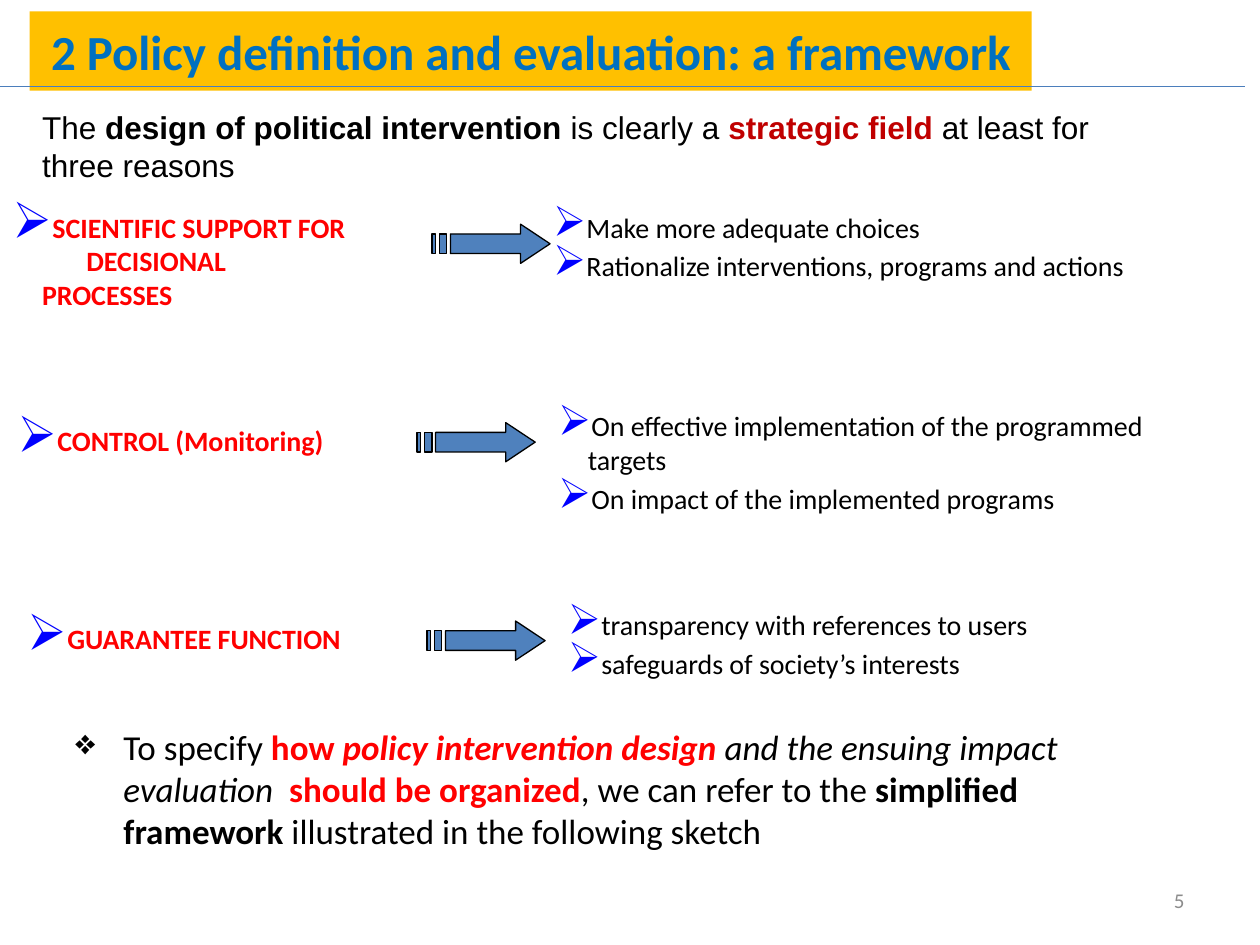
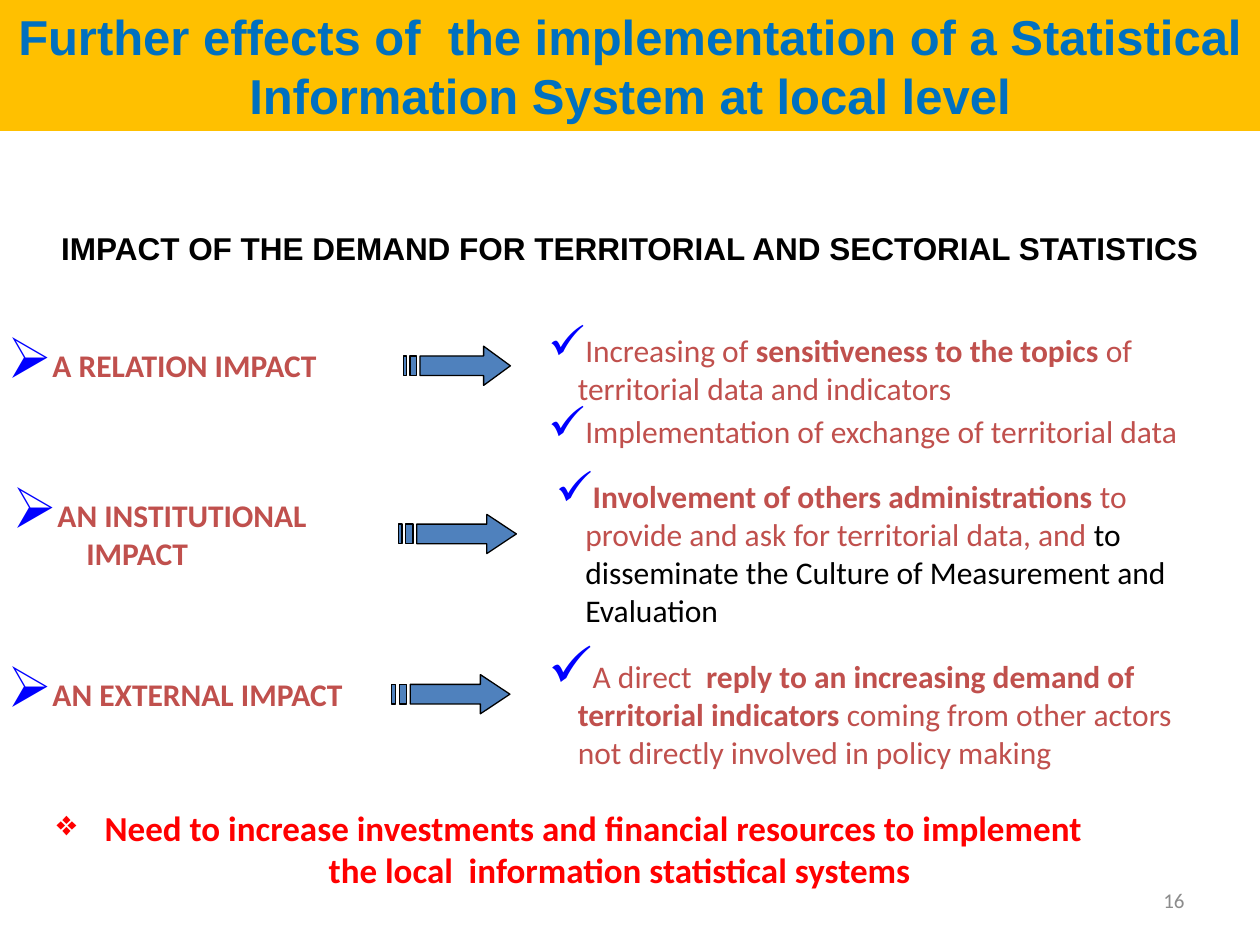
"""Build two slides on policy evaluation and on the effects of a local statistical system."""
from dataclasses import dataclass

import pptx
import pptx.dml.color
import pptx.enum.shapes
import pptx.enum.text
import pptx.oxml
import pptx.oxml.ns
import pptx.util
from pptx.util import Cm

ALIGN = pptx.enum.text.PP_ALIGN
ANCHOR = pptx.enum.text.MSO_ANCHOR


@dataclass(frozen=True)
class Theme:
    band: str = "FFC000"
    title: str = "0070C0"
    ink: str = "000000"
    red: str = "FF0000"
    crimson: str = "C00000"
    brick: str = "C0504D"
    bullet: str = "0000FF"
    arrow: str = "4F81BD"
    rule: str = "4B7EBC"
    number: str = "8C8C8C"
    body_font: str = "Calibri"
    lead_font: str = "Arial"
    title_size: int = 28
    closing_size: int = 20
    lead_size: int = 18
    number_size: int = 12


THEME = Theme()
HANG, CLOSING_HANG, CONTINUED = 0.6, 0.97, 0.89
ARROW_HEIGHT, POINTS_WIDTH = 0.79, 13.79

FRAMEWORK = {
    "title": "2 Policy definition and evaluation: a framework",
    "title_box": (0.6, 0.23, 20.2, 1.6),
    "title_font": THEME.body_font,
    "rule": (0, 1.75, 25.1, 1.75),
    "lead": [("The ", ""), ("design of political intervention ", "b"),
             ("is clearly a ", ""), ("strategic field ", "crimson b"),
             ("at least for three reasons", "")],
    "lead_box": (0.6, 2.06, 21.9, 2.57),
    "lead_align": ALIGN.LEFT,
    "row_size": 16,
    "label_color": THEME.red,
    "point_color": THEME.ink,
    "point_mark": "➢",
    "rows": [
        {"label": ["SCIENTIFIC SUPPORT FOR", "DECISIONAL PROCESSES"],
         "label_at": (0, 4.11, 7.44), "arrow_at": (8.71, 4.52, 2.38),
         "points_at": (10.9, 4.11), "mark_size": 150,
         "points": [[("Make more adequate choices", "")],
                    [("Rationalize interventions, programs and actions", "")]]},
        {"label": ["CONTROL (Monitoring)"],
         "label_at": (0.1, 8.41, 6.8), "arrow_at": (8.41, 8.52, 2.38),
         "points_at": (11, 8.12), "mark_size": 150,
         "points": [[("On effective implementation of the programmed targets", "")],
                    [("On impact of the implemented programs", "")]]},
        {"label": ["GUARANTEE FUNCTION"],
         "label_at": (0.3, 12.4, 7), "arrow_at": (8.61, 12.52, 2.38),
         "points_at": (11.2, 12.12), "mark_size": 150,
         "points": [[("transparency with references to users", "")],
                    [("safeguards of society’s interests", "")]]},
    ],
    "closing": [[("To specify ", ""), ("how ", "red b"),
                 ("policy intervention design ", "red b i"),
                 ("and the ensuing impact evaluation  ", "i"),
                 ("should be organized", "red b"),
                 (", we can refer to the ", ""), ("simplified framework ", "b"),
                 ("illustrated in the following sketch", "")]],
    "closing_box": (1.27, 14.5, 22.2, 2.82),
    "closing_color": THEME.ink,
    "number": "5",
}

EFFECTS = {
    "title": "Further effects of  the implementation of a Statistical "
             "Information System at local level",
    "title_box": (0, 0, 25.4, 2.64),
    "title_font": THEME.lead_font,
    "rule": None,
    "lead": [("IMPACT OF THE DEMAND FOR TERRITORIAL AND SECTORIAL STATISTICS", "b")],
    "lead_box": (0, 4.5, 25.4, 3.18),
    "lead_align": ALIGN.CENTER,
    "row_size": 18,
    "label_color": THEME.brick,
    "point_color": THEME.brick,
    "point_mark": "✓",
    "rows": [
        {"label": ["A RELATION IMPACT"],
         "label_at": (-0.1, 6.86, 7.9), "arrow_at": (8.13, 6.98, 2.16),
         "points_at": (10.8, 6.55), "mark_size": 150,
         "points": [[("Increasing of ", ""), ("sensitiveness to the topics ", "b"),
                     ("of territorial data and indicators", "")],
                    [("Implementation of exchange of territorial data", "")]]},
        {"label": ["AN INSTITUTIONAL", "IMPACT"],
         "label_at": (0, 9.88, 7.34), "arrow_at": (8.03, 10.37, 2.38),
         "points_at": (10.95, 9.5), "mark_size": 150,
         "points": [[("Involvement of others administrations ", "b"),
                     ("to provide and ask for territorial data, and ", ""),
                     ("to disseminate the Culture of Measurement and Evaluation", "ink")]]},
        {"label": ["AN EXTERNAL IMPACT"],
         "label_at": (-0.1, 13.48, 8.53), "arrow_at": (7.9, 13.6, 2.38),
         "points_at": (10.8, 13.13), "mark_size": 180,
         "points": [[("A direct  ", ""),
                     ("reply to an increasing demand of territorial indicators", "b"),
                     (" coming from other actors not directly involved in policy making", "")]]},
    ],
    "closing": [[("Need to increase investments and financial resources to implement", "b")],
                [("the local  information statistical systems", "b")]],
    "closing_box": (0.89, 16.13, 23.2, 1.96),
    "closing_color": THEME.red,
    "number": "16",
}


def rgb(color):
    return pptx.dml.color.RGBColor.from_string(color)


def add_part(parent, tag, **attributes):
    part = pptx.oxml.ns.qn(tag)
    child = parent.makeelement(part, attributes)
    parent.append(child)
    return child


def set_indent(paragraph, margin, first):
    properties = paragraph._p.get_or_add_pPr()
    properties.set("marL", str(Cm(margin)))
    properties.set("indent", str(Cm(first)))
    return properties


def set_bullet(paragraph, mark, color, percent, hang):
    properties = set_indent(paragraph, hang, -hang)
    add_part(add_part(properties, "a:buClr"), "a:srgbClr", val=color)
    add_part(properties, "a:buSzPct", val=str(percent * 1000))
    add_part(properties, "a:buChar", char=mark)


def write(paragraph, runs, size, color, font=THEME.body_font, align=ALIGN.LEFT):
    paragraph.alignment = align
    paragraph.font.name = font
    paragraph.font.size = pptx.util.Pt(size)
    paragraph.font.color.rgb = rgb(color)
    for words, style in runs:
        run = paragraph.add_run()
        run.text = words
        for trait in style.split():
            if trait == "b":
                run.font.bold = True
            elif trait == "i":
                run.font.italic = True
            else:
                run.font.color.rgb = rgb(getattr(THEME, trait))


def add_frame(slide, box, count=1):
    frame = slide.shapes.add_textbox(*map(Cm, box)).text_frame
    frame.word_wrap = True
    for _ in range(count - 1):
        frame.add_paragraph()
    return frame


def add_title(slide, content):
    band = slide.shapes.add_shape(pptx.enum.shapes.MSO_SHAPE.RECTANGLE,
                                  *map(Cm, content["title_box"]))
    band.shadow.inherit = False
    band.fill.solid()
    band.fill.fore_color.rgb = rgb(THEME.band)
    band.line.fill.background()
    band.text_frame.word_wrap = True
    band.text_frame.vertical_anchor = ANCHOR.MIDDLE
    write(band.text_frame.paragraphs[0], [(content["title"], "b")], THEME.title_size,
          THEME.title, content["title_font"], ALIGN.CENTER)
    if content["rule"]:
        rule = slide.shapes.add_connector(pptx.enum.shapes.MSO_CONNECTOR.STRAIGHT,
                                          *map(Cm, content["rule"]))
        rule.line.color.rgb = rgb(THEME.rule)
        rule.line.width = pptx.util.Pt(0.75)
        add_part(rule._element.spPr, "a:effectLst")


def add_striped_arrow(slide, left, top, width):
    def bar(start, end):
        return [(start, 0.25), (start, 0.75), (end, 0.75), (end, 0.25)]

    head = [(0.75, 0), (0.75, 0.25), (5 / 32, 0.25), (5 / 32, 0.75),
            (0.75, 0.75), (0.75, 1), (1, 0.5)]
    outlines = [[(Cm(left + x * width), Cm(top + y * ARROW_HEIGHT)) for x, y in outline]
                for outline in (head, bar(2 / 32, 4 / 32), bar(0, 1 / 32))]
    builder = slide.shapes.build_freeform(*outlines[0][0])
    builder.add_line_segments(outlines[0][1:])
    for outline in outlines[1:]:
        builder.move_to(*outline[0])
        builder.add_line_segments(outline[1:])
    arrow = builder.convert_to_shape()
    arrow.shadow.inherit = False
    arrow.fill.solid()
    arrow.fill.fore_color.rgb = rgb(THEME.arrow)
    arrow.line.color.rgb = rgb(THEME.ink)
    arrow.line.width = pptx.util.Pt(0.75)


def add_row(slide, row, content):
    size = content["row_size"]
    lines = row["label"]
    label = add_frame(slide, (*row["label_at"], len(lines) * 0.8 + 0.2), len(lines))
    for index, (paragraph, line) in enumerate(zip(label.paragraphs, lines)):
        if index:
            set_indent(paragraph, HANG, CONTINUED)
        else:
            set_bullet(paragraph, "➢", THEME.bullet, 180, HANG)
        write(paragraph, [(line, "b")], size, content["label_color"])

    add_striped_arrow(slide, *row["arrow_at"])

    points = add_frame(slide, (*row["points_at"], POINTS_WIDTH, 2.6), len(row["points"]))
    for paragraph, runs in zip(points.paragraphs, row["points"]):
        set_bullet(paragraph, content["point_mark"], THEME.bullet, row["mark_size"], HANG)
        paragraph.space_before = pptx.util.Pt(3)
        write(paragraph, runs, size, content["point_color"])


def add_closing(slide, content):
    color = content["closing_color"]
    closing = add_frame(slide, content["closing_box"], len(content["closing"]))
    for index, (paragraph, runs) in enumerate(zip(closing.paragraphs, content["closing"])):
        if not index:
            set_bullet(paragraph, "❖", color, 100, CLOSING_HANG)
        write(paragraph, runs, THEME.closing_size, color,
              align=ALIGN.CENTER if index else ALIGN.LEFT)


def add_slide(deck, content):
    slide = deck.slides.add_slide(deck.slide_layouts[6])
    add_title(slide, content)
    lead = add_frame(slide, content["lead_box"])
    write(lead.paragraphs[0], content["lead"], THEME.lead_size, THEME.ink,
          THEME.lead_font, content["lead_align"])
    for row in content["rows"]:
        add_row(slide, row, content)
    add_closing(slide, content)
    number = add_frame(slide, (18.2, 17.65, 5.93, 1.01))
    number.vertical_anchor = ANCHOR.MIDDLE
    write(number.paragraphs[0], [(content["number"], "")], THEME.number_size,
          THEME.number, align=ALIGN.RIGHT)


def main():
    deck = pptx.Presentation()
    deck.slide_width, deck.slide_height = Cm(25.4), Cm(19.05)
    for content in (FRAMEWORK, EFFECTS):
        add_slide(deck, content)
    deck.save("out.pptx")


if __name__ == "__main__":
    main()
